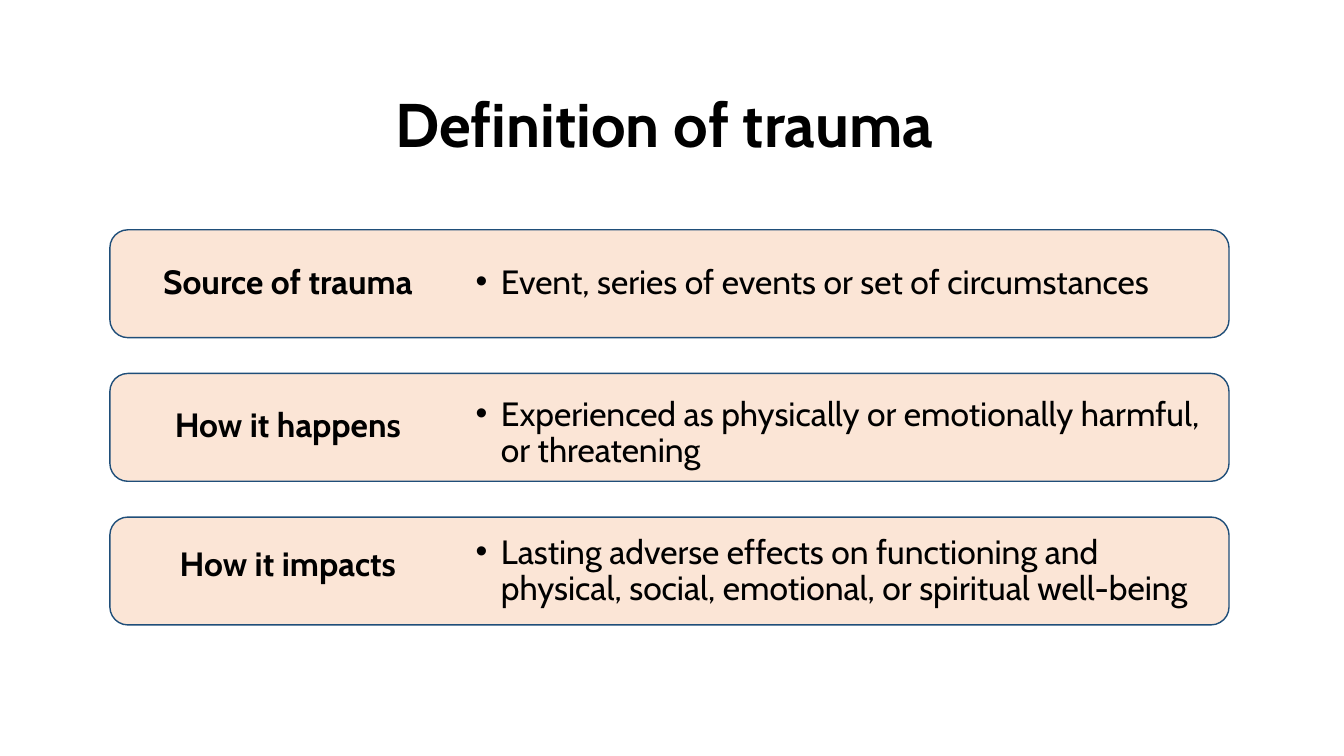
import dataclasses

import pptx
import pptx.dml.color
import pptx.enum.shapes
import pptx.enum.text
import pptx.oxml.ns
import pptx.util
from lxml import etree
from pptx.util import Inches

BLACK = pptx.dml.color.RGBColor(0x00, 0x00, 0x00)
PEACH = pptx.dml.color.RGBColor(0xFB, 0xE5, 0xD6)
NAVY = pptx.dml.color.RGBColor(0x1F, 0x4E, 0x79)
FONT = "Cabin"
TOP, STEP = 2.28, 1.425


@dataclasses.dataclass
class Row:
    head: str
    body: str
    head_top: float
    body_top: float
    body_high: float


ROWS = [
    Row("Source of trauma", "Event, series of events or set of circumstances",
        2.58, 2.58, 0.64),
    Row("How it happens",
        "Experienced as physically or emotionally harmful, or threatening",
        4.0, 3.89, 0.69),
    Row("How it impacts",
        "Lasting adverse effects on functioning and physical, social, "
        "emotional, or spiritual well-being",
        5.38, 5.26, 0.71),
]


def put_text(shape, text: str, *, size: float = 24, bold: bool = False,
             center: bool = False, bullet: bool = False, line: float = 0.9,
             before: float = 10, after: float = 0, middle: bool = False) -> None:
    frame = shape.text_frame
    frame.word_wrap = True
    frame.auto_size = pptx.enum.text.MSO_AUTO_SIZE.NONE
    anchor = pptx.enum.text.MSO_ANCHOR
    frame.vertical_anchor = anchor.MIDDLE if middle else anchor.TOP
    para = frame.paragraphs[0]
    align = pptx.enum.text.PP_ALIGN
    para.alignment = align.CENTER if center else align.LEFT
    para.line_spacing = line
    para.space_before = pptx.util.Pt(before)
    para.space_after = pptx.util.Pt(after)
    run = para.add_run()
    run.text = text
    run.font.name = FONT
    run.font.size = pptx.util.Pt(size)
    run.font.bold = bold
    run.font.color.rgb = BLACK
    if bullet:
        props = para._p.get_or_add_pPr()
        props.set("marL", str(Inches(0.25)))
        props.set("indent", str(-Inches(0.25)))
        qn = pptx.oxml.ns.qn
        etree.SubElement(props, qn("a:buFont")).set("typeface", "Arial")
        etree.SubElement(props, qn("a:buChar")).set("char", "•")


def add_box(slide, left: float, top: float, width: float, high: float):
    return slide.shapes.add_textbox(
        Inches(left), Inches(top), Inches(width), Inches(high))


def add_row(slide, row: Row, top: float) -> None:
    # Rounded panel
    panel = slide.shapes.add_shape(
        pptx.enum.shapes.MSO_SHAPE.ROUNDED_RECTANGLE,
        Inches(1.09), Inches(top), Inches(11.1), Inches(1.07))
    panel.shadow.inherit = False
    panel.fill.solid()
    panel.fill.fore_color.rgb = PEACH
    panel.line.color.rgb = NAVY
    panel.line.width = pptx.util.Pt(1)
    # Label and definition
    put_text(add_box(slide, 1.29, row.head_top, 3.13, 0.53), row.head,
             bold=True, center=True)
    put_text(add_box(slide, 4.62, row.body_top, 7.44, row.body_high), row.body,
             bullet=True)


def main() -> None:
    deck = pptx.Presentation()
    deck.slide_width, deck.slide_height = Inches(13.33), Inches(7.5)
    slide = deck.slides.add_slide(deck.slide_layouts[5])

    # Title
    title = slide.shapes.title
    title.left, title.top = Inches(0.84), Inches(0.71)
    title.width, title.height = Inches(11.5), Inches(0.95)
    put_text(title, "Definition of trauma", size=44, bold=True, center=True,
             line=1.1, before=18, after=6, middle=True)

    # Rows
    for num, row in enumerate(ROWS):
        add_row(slide, row, TOP + num * STEP)

    deck.save("out.pptx")


if __name__ == "__main__":
    main()
